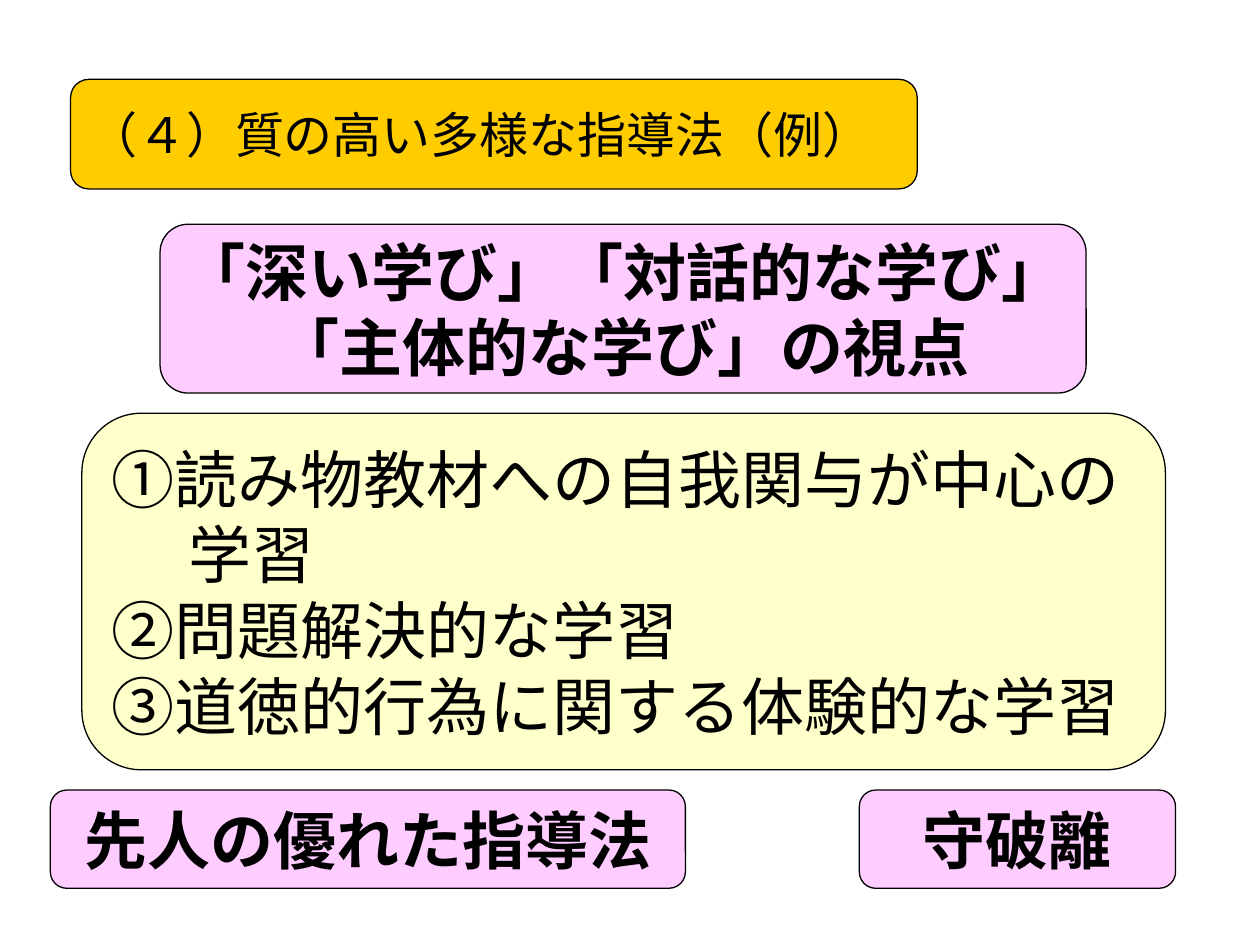
from dataclasses import dataclass

from pptx import Presentation
from pptx.dml.color import RGBColor
from pptx.enum.shapes import MSO_SHAPE as Shape
from pptx.enum.text import MSO_ANCHOR as Anchor, PP_ALIGN as Align
from pptx.util import Inches, Pt

BLACK = RGBColor(0x00, 0x00, 0x00)
GOLD = RGBColor(0xFF, 0xCC, 0x00)
PINK = RGBColor(0xFF, 0xCC, 0xFF)
CREAM = RGBColor(0xFF, 0xFF, 0xCC)


@dataclass(frozen=True)
class Line:
    text: str
    indent: float = 0


@dataclass(frozen=True)
class Panel:
    left: float
    top: float
    width: float
    height: float
    fill: RGBColor
    lines: tuple[Line, ...]
    size: int = 36
    bold: bool = False
    align: Align = Align.LEFT


KEY = {"fill": PINK, "bold": True, "align": Align.CENTER}
LOW = {"top": 6.27, "height": 0.78}

PANELS = (
    Panel(0.56, 0.63, 6.72, 0.87, GOLD,
          (Line("（４）質の高い多様な指導法（例）"),), size=28),
    Panel(left=0.4, width=5.04, lines=(Line("先人の優れた指導法"),), **LOW, **KEY),
    Panel(left=6.82, width=2.51, lines=(Line("守破離"),), **LOW, **KEY),
    Panel(1.27, 1.78, 7.35, 1.34, lines=(
        Line("「深い学び」「対話的な学び」"),
        Line("「主体的な学び」の視点"),
    ), **KEY),
    Panel(0.65, 3.28, 8.6, 2.83, CREAM, (
        Line("①読み物教材への自我関与が中心の"),
        Line("学習", indent=0.61),
        Line("②問題解決的な学習"),
        Line("③道徳的行為に関する体験的な学習"),
    )),
)


def style(item, form: dict) -> None:
    """Set each attribute of item from the format values."""
    for name, value in form.items():
        setattr(item, name, value)


def write(para, line: Line, panel: Panel) -> None:
    para.alignment = panel.align
    if line.indent:
        props = para._p.get_or_add_pPr()
        props.set("marL", str(Inches(line.indent)))
        props.set("indent", "0")
    run = para.add_run()
    run.text = line.text
    style(run.font, {"name": "Arial", "size": Pt(panel.size), "bold": panel.bold})
    run.font.color.rgb = BLACK


def draw(slide, panel: Panel) -> None:
    spot = (panel.left, panel.top, panel.width, panel.height)
    box = slide.shapes.add_shape(Shape.ROUNDED_RECTANGLE, *map(Inches, spot))
    box.shadow.inherit = False
    box.fill.solid()
    box.fill.fore_color.rgb = panel.fill
    box.line.color.rgb = BLACK
    box.line.width = Pt(0.75)
    frame = box.text_frame
    style(frame, {"word_wrap": False, "vertical_anchor": Anchor.MIDDLE})
    for i, line in enumerate(panel.lines):
        para = frame.add_paragraph() if i else frame.paragraphs[0]
        write(para, line, panel)


def main() -> None:
    deck = Presentation()
    style(deck, {"slide_width": Inches(10), "slide_height": Inches(7.5)})
    slide = deck.slides.add_slide(deck.slide_layouts[6])
    for panel in PANELS:
        draw(slide, panel)
    deck.save("out.pptx")


if __name__ == "__main__":
    main()
